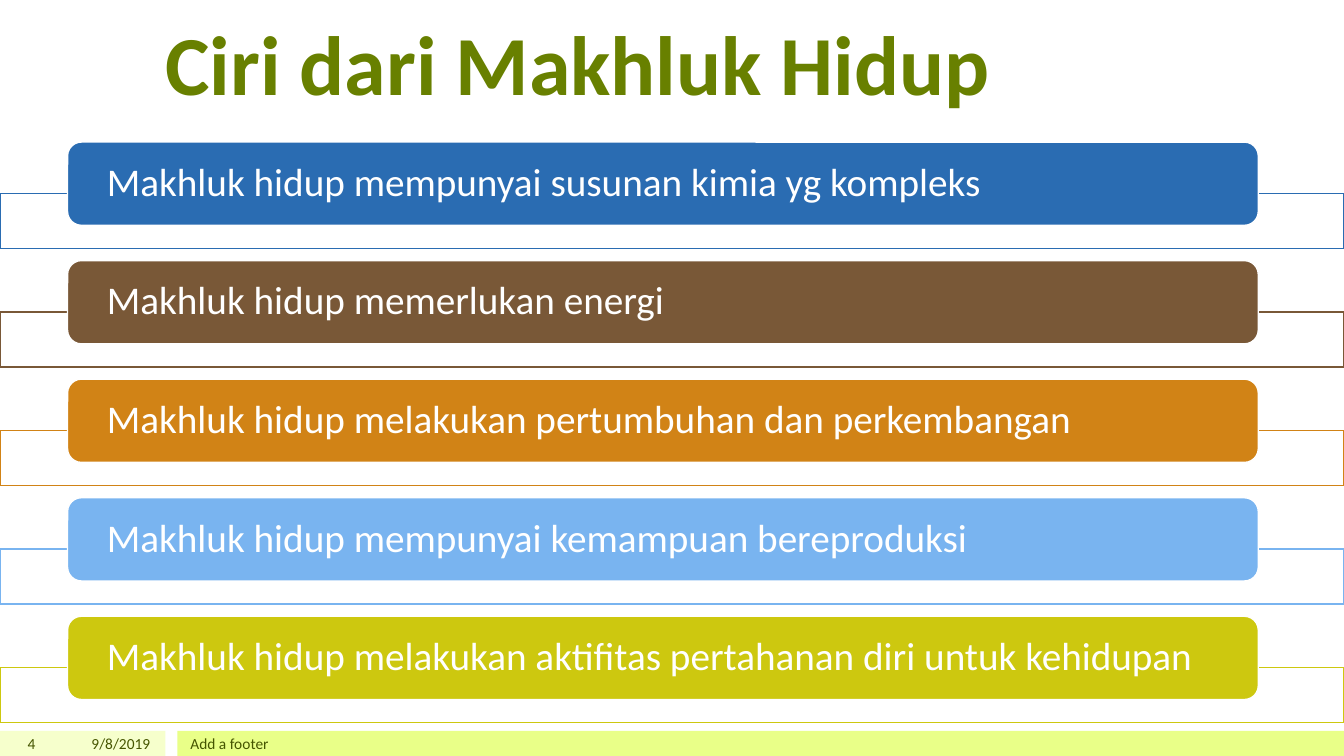
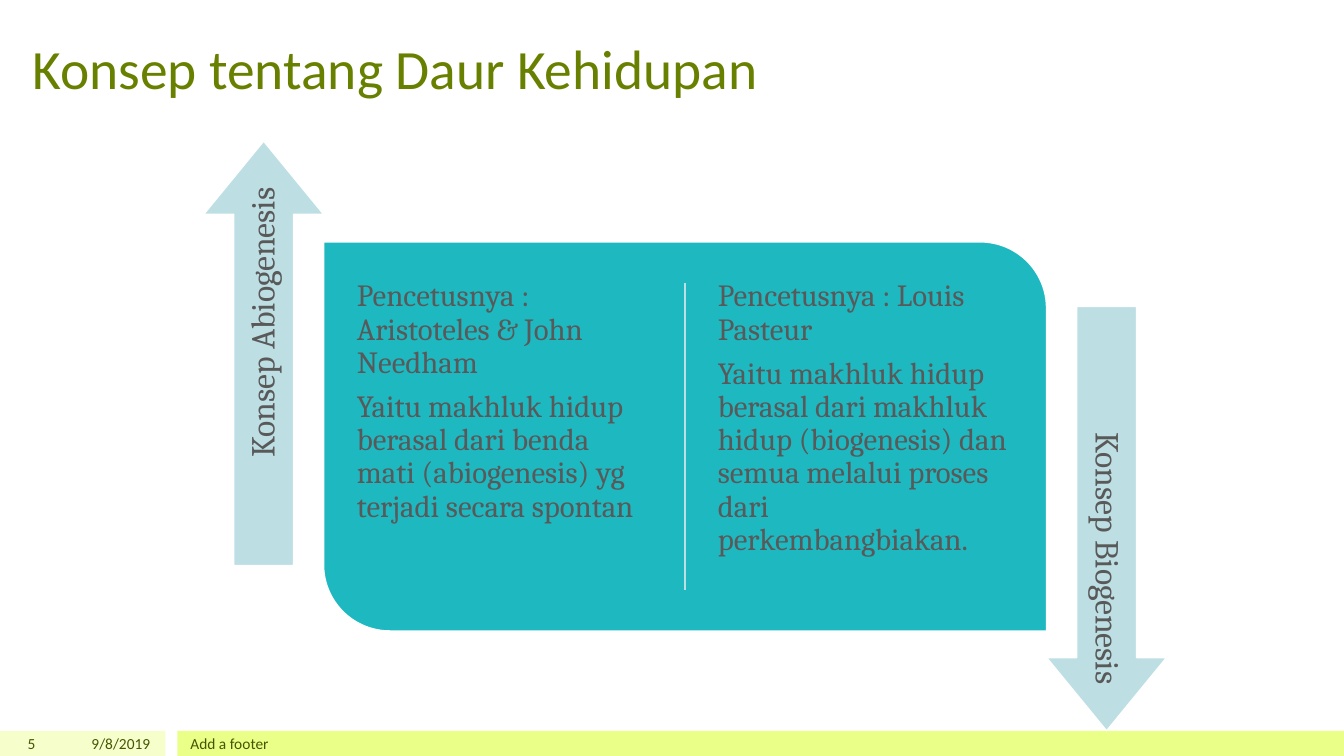
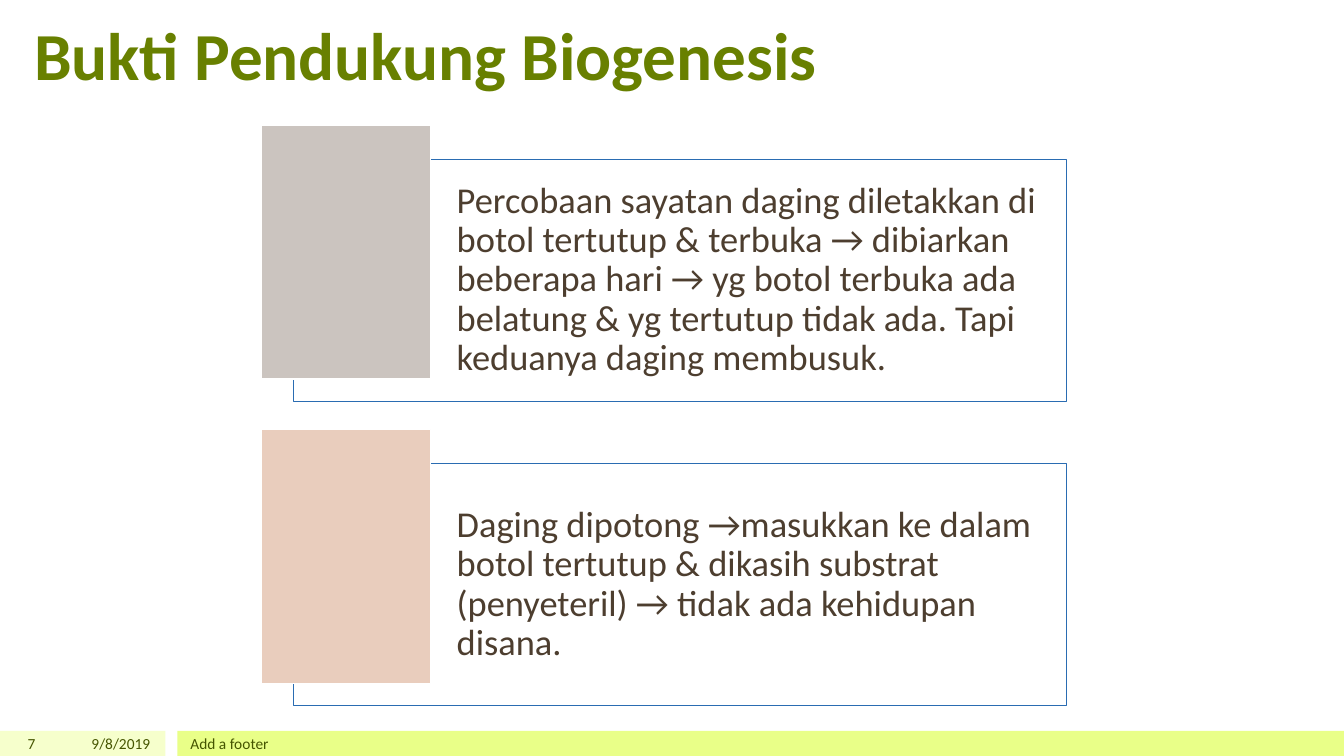
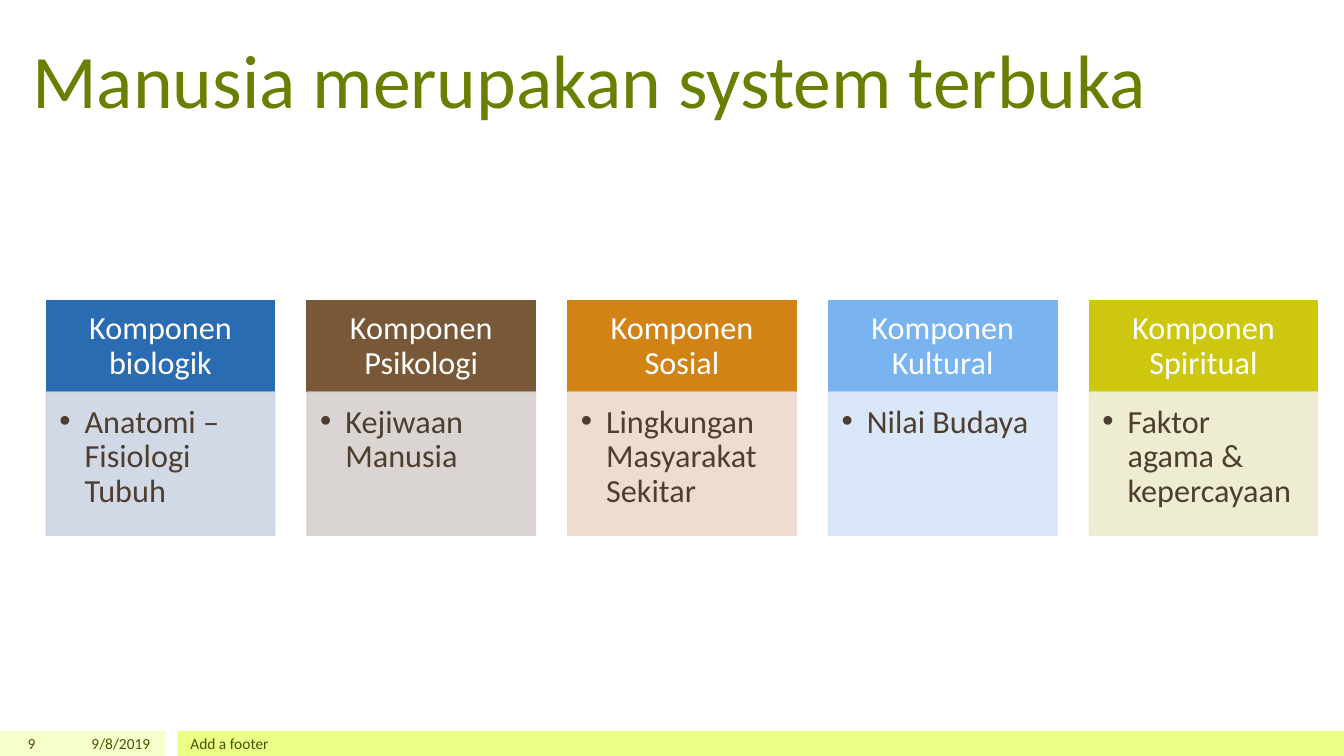
from lxml import etree
from pptx import Presentation
from pptx import util as u
from pptx.dml.color import RGBColor
from pptx.enum import shapes, text
from pptx.oxml.ns import qn

WIDTH, HEIGHT = 13.33, 7.5
FOOT_TOP, FOOT_HEIGHT = 7.25, 0.25
WHITE, TITLE_GREEN, FOOT_GREEN = "FFFFFF", "688000", "455500"
BROWN, GREY, TEAL, PALE_TEAL = "4D3E2F", "595959", "1EB8C1", "BDDFE3"
BANDS = [(0, 1.64, "F6FFCC"), (1.76, 11.57, "E9FF88")]
ACCENTS = ["2A6CB2", "795837", "D18316", "79B4F0", "CDC80F"]
TINTS = ["CDD4E4", "D7D1CE", "EED9CC", "D7E5F9", "EDEBCC"]
LEFT, CENTER, RIGHT = text.PP_ALIGN.LEFT, text.PP_ALIGN.CENTER, text.PP_ALIGN.RIGHT
TOP, MIDDLE, BOTTOM = (text.MSO_ANCHOR.TOP, text.MSO_ANCHOR.MIDDLE,
                       text.MSO_ANCHOR.BOTTOM)
KIND = shapes.MSO_SHAPE


def rgb(code):
    """Turn a hex string into a colour."""
    return RGBColor.from_string(code)


def emu(box):
    """Turn a box in inches into lengths."""
    return [u.Inches(length) for length in box]


def inset(box, left, top, right, bottom):
    """Shrink a box by a margin on each side."""
    x, y, width, height = box
    return x + left, y + top, width - left - right, height - top - bottom


def rows(box, count, gap):
    """Split a box into equal rows."""
    x, y, width, height = box
    size = (height - gap * (count - 1)) / count
    return [(x, y + i * (size + gap), width, size) for i in range(count)]


def columns(box, count, gap):
    """Split a box into equal columns."""
    x, y, width, height = box
    size = (width - gap * (count - 1)) / count
    return [(x + i * (size + gap), y, size, height) for i in range(count)]


def apply(target, values):
    """Set every attribute named in a dict."""
    for name, value in values.items():
        setattr(target, name, value)


def write(shape, lines, size, color, font="Calibri", bold=False, align=LEFT,
          anchor=MIDDLE, margins=(0.1, 0, 0.1, 0), spacing=0.9, bullet=False):
    """Fill a shape with formatted paragraphs."""
    frame = shape.text_frame
    sides = ("margin_left", "margin_top", "margin_right", "margin_bottom")
    apply(frame, {"word_wrap": True, "auto_size": text.MSO_AUTO_SIZE.NONE,
                  "vertical_anchor": anchor, **dict(zip(sides, emu(margins)))})
    for index, line in enumerate(lines):
        para = frame.add_paragraph() if index else frame.paragraphs[0]
        para.text = line
        apply(para, {"alignment": align, "line_spacing": spacing,
                     "space_before": u.Pt(0), "space_after": u.Pt(0.35 * size)})
        if bullet:
            add_bullet(para)
        apply(para.font, {"name": font, "size": u.Pt(size), "bold": bold})
        para.font.color.rgb = rgb(color)


def add_bullet(para):
    """Give a paragraph a round bullet and a hanging indent."""
    props = para._p.get_or_add_pPr()
    props.set("marL", str(u.Inches(0.25)))
    props.set("indent", str(-u.Inches(0.25)))
    etree.SubElement(props, qn("a:buFont"), typeface="Arial")
    etree.SubElement(props, qn("a:buChar"), char="•")


def draw(page, kind, box, fill, line=None, weight=1, opacity=100):
    """Add a preset shape with flat fill and outline."""
    shape = page.shapes.add_shape(kind, *emu(box))
    shape.shadow.inherit = False
    shape.fill.solid()
    shape.fill.fore_color.rgb = rgb(fill)
    if line:
        shape.line.color.rgb = rgb(line)
        shape.line.width = u.Pt(weight)
    else:
        shape.line.fill.background()
    if opacity < 100:
        for color in shape.element.spPr.iter(qn("a:srgbClr")):
            etree.SubElement(color, qn("a:alpha"), val=str(opacity * 1000))
    return shape


def add_page(deck, number, title, box, size, bold=False):
    """Add a slide with its title and footer texts."""
    page = deck.slides.add_slide(deck.slide_layouts[5])
    heading = page.shapes.title
    apply(heading, dict(zip(("left", "top", "width", "height"), emu(box))))
    write(heading, [title], size, TITLE_GREEN, bold=bold, anchor=BOTTOM, spacing=1)
    for left, width, words, align in [(0, 0.45, str(number), RIGHT),
                                      (0.5, 1.09, "9/8/2019", RIGHT),
                                      (1.79, 10, "Add a footer", LEFT)]:
        label = page.shapes.add_textbox(*emu((left, FOOT_TOP, width, FOOT_HEIGHT)))
        write(label, [words], 11, FOOT_GREEN, align=align, spacing=1)
    return page


def add_bands(deck):
    """Place the footer bands on the shared layout."""
    layout = deck.slide_layouts[5]
    for index, (left, width, color) in enumerate(BANDS):
        band = draw(deck.slides[0], KIND.RECTANGLE,
                    (left, FOOT_TOP, width, FOOT_HEIGHT), color)
        band.name = f"Footer band {index + 1}"
        band.element.nvSpPr.cNvPr.set("id", str(100 + index))
        layout.shapes.element.append(band.element)


def label_list(page, box, labels):
    """Stack rounded labels over outlined strips."""
    for row, label, accent in zip(rows(box, len(labels), 0.12), labels, ACCENTS):
        draw(page, KIND.RECTANGLE, inset(row, 0, 0.51, 0, 0), WHITE, accent)
        pill = draw(page, KIND.ROUNDED_RECTANGLE,
                    inset(row, 0.67, 0, 0.85, 0.23), accent, WHITE)
        write(pill, [label], 28, WHITE, margins=(0.35, 0, 0.35, 0))


def concept_arrow(page, box, label, rotation):
    """Fill an upright box with a turned arrow and its label."""
    x, y, width, height = box
    lying = (x + (width - height) / 2, y + (height - width) / 2, height, width)
    arrow = draw(page, KIND.RIGHT_ARROW, lying, PALE_TEAL, WHITE)
    arrow.adjustments[0], arrow.adjustments[1] = 0.5, 0.61
    arrow.rotation = rotation
    write(arrow, [label], 24, GREY, "Cambria", align=RIGHT, margins=(0.1,) * 4)


def comparison(page, box, concepts):
    """Set two concepts side by side between opposite arrows."""
    panel = inset(box, 1.19, 1, 1.19, 0.99)
    shape = draw(page, KIND.ROUND_2_DIAG_RECTANGLE, panel, TEAL, WHITE)
    shape.adjustments[0], shape.adjustments[1] = 0, 0.17
    x, y, width, height = inset(panel, 0, 0.41, 0, 0.41)
    middle = x + width / 2
    divider = page.shapes.add_connector(
        shapes.MSO_CONNECTOR.STRAIGHT, *emu((middle, y, middle, y + height)))
    divider.line.color.rgb = rgb(PALE_TEAL)
    divider.line.width = u.Pt(1)
    etree.SubElement(divider.element.spPr, qn("a:effectLst"))
    halves = columns(inset(panel, 0.24, 0.29, 0.24, 0.3), 2, 0.47)
    sides = [(inset(box, 0, 0, 8.36, 1.64), 270), (inset(box, 8.36, 1.64, 0, 0), 90)]
    for half, (side, rotation), (label, lines) in zip(halves, sides, concepts):
        words = page.shapes.add_textbox(*emu(half))
        write(words, lines, 22, GREY, "Cambria", anchor=TOP, margins=(0.09,) * 4)
        concept_arrow(page, side, label, rotation)


def evidence(page, box, items):
    """Stack framed texts, each with a colour block at its left."""
    for row, (words, color) in zip(rows(box, len(items), 0.28), items):
        frame = draw(page, KIND.RECTANGLE, inset(row, 0.32, 0.34, 0, 0),
                     WHITE, ACCENTS[0], 0.5)
        write(frame, [words], 26, BROWN, margins=(1.62, 0.11, 0.11, 0.11))
        draw(page, KIND.RECTANGLE, inset(row, 0, 0, 6.31, 0.22), color, WHITE)


def component_cards(page, box, cards):
    """Set headed cards side by side."""
    cells = columns(box, len(cards), 0.32)
    for cell, (heading, words), accent, tint in zip(cells, cards, ACCENTS, TINTS):
        head = draw(page, KIND.RECTANGLE, inset(cell, 0, 0, 0, 1.42), accent, accent)
        write(head, [heading], 23, WHITE, align=CENTER,
              margins=(0.18, 0.1, 0.18, 0.1))
        body = draw(page, KIND.RECTANGLE, inset(cell, 0, 0.91, 0, 0),
                    tint, tint, opacity=90)
        write(body, [words], 23, BROWN, anchor=TOP, bullet=True,
              margins=(0.13, 0.13, 0.18, 0.2))


def main():
    """Build and save the deck."""
    deck = Presentation()
    deck.slide_width, deck.slide_height = emu((WIDTH, HEIGHT))

    page = add_page(deck, 4, "Ciri dari Makhluk Hidup", (1.54, 0, 10.25, 1.11), 60, True)
    label_list(page, (0, 1.41, WIDTH, 5.76), [
        "Makhluk hidup mempunyai susunan kimia yg kompleks",
        "Makhluk hidup memerlukan energi",
        "Makhluk hidup melakukan pertumbuhan dan perkembangan",
        "Makhluk hidup mempunyai kemampuan bereproduksi",
        "Makhluk hidup melakukan aktifitas pertahanan diri untuk kehidupan"])

    page = add_page(deck, 5, "Konsep tentang Daur Kehidupan",
                    (0.22, 0.18, 12.88, 0.82), 39.6)
    comparison(page, (2.02, 1.4, 9.55, 5.85), [
        ("Konsep Abiogenesis", [
            "Pencetusnya : Aristoteles & John Needham",
            "Yaitu makhluk hidup berasal dari benda mati (abiogenesis) yg "
            "terjadi secara spontan"]),
        ("Konsep Biogenesis", [
            "Pencetusnya : Louis Pasteur",
            "Yaitu makhluk hidup berasal dari makhluk hidup (biogenesis) dan "
            "semua melalui proses dari perkembangbiakan."])])

    page = add_page(deck, 7, "Bukti Pendukung Biogenesis",
                    (0.24, 0, 12.71, 0.93), 48, True)
    evidence(page, (2.59, 1.24, 7.99, 5.76), [
        ("Percobaan sayatan daging diletakkan di botol tertutup & terbuka → "
         "dibiarkan beberapa hari → yg botol terbuka ada belatung & yg tertutup "
         "tidak ada. Tapi keduanya daging membusuk.", "CBC4BF"),
        ("Daging dipotong →masukkan ke dalam botol tertutup & dikasih substrat "
         "(penyeteril) → tidak ada kehidupan disana.", "E9CDBD")])

    page = add_page(deck, 9, "Manusia merupakan system terbuka",
                    (0.22, 0.18, 12.85, 1.05), 54)
    component_cards(page, (0.46, 2.98, 12.61, 2.33), [
        ("Komponen biologik", "Anatomi – Fisiologi Tubuh"),
        ("Komponen Psikologi", "Kejiwaan Manusia"),
        ("Komponen Sosial", "Lingkungan Masyarakat Sekitar"),
        ("Komponen Kultural", "Nilai Budaya"),
        ("Komponen Spiritual", "Faktor agama & kepercayaan")])

    add_bands(deck)
    deck.save("out.pptx")


if __name__ == "__main__":
    main()
